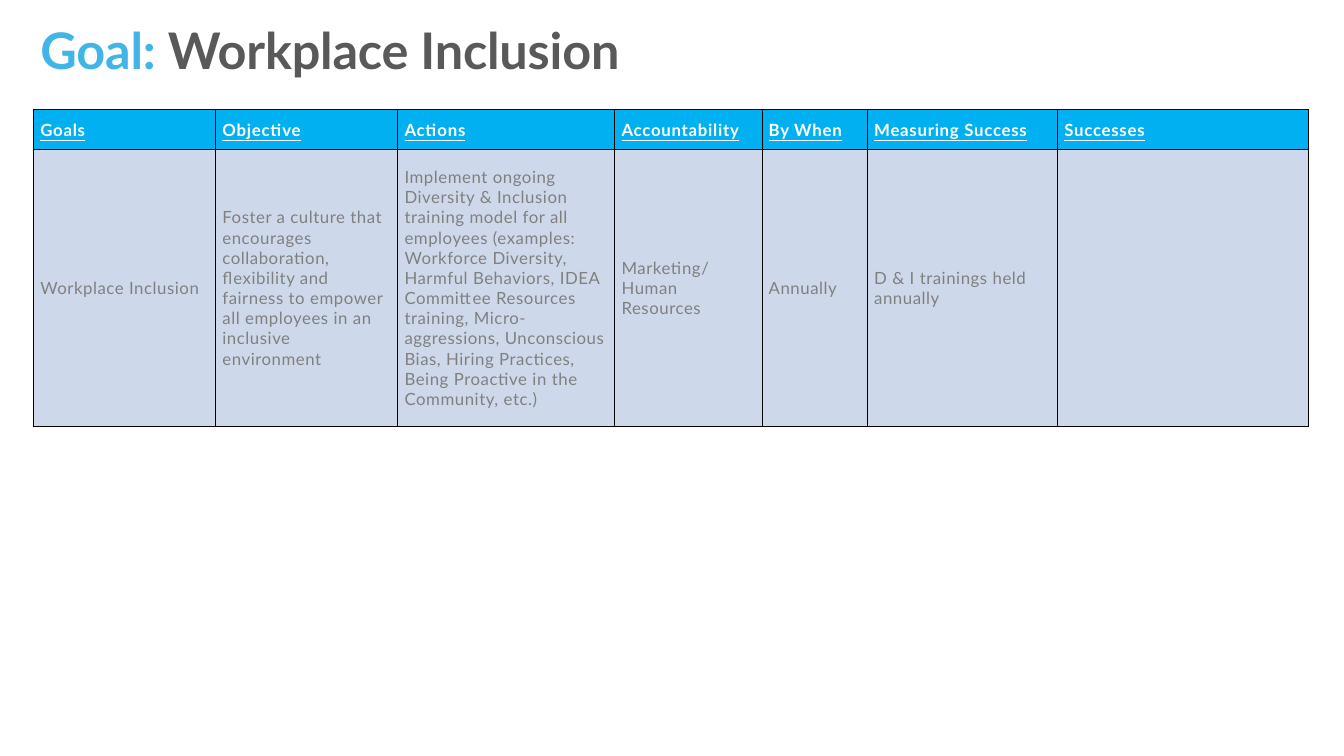
from lxml.etree import SubElement
from pptx import Presentation
from pptx.dml.color import RGBColor
from pptx.enum.text import MSO_ANCHOR as Anchor, MSO_AUTO_SIZE as AutoSize, PP_ALIGN as Align
from pptx.oxml.ns import qn
from pptx.util import Inches, Pt

COLORS = {
    "accent": "41B6E6", "title": "595959", "header": "00B0F0", "header_text": "FFFFFF",
    "body": "CDD9EA", "body_text": "808080", "border": "000000",
}
FONTS = {
    "title": {"name": "Lato", "size": Pt(54), "bold": True},
    "header": {"name": "Lato", "size": Pt(18), "bold": True, "underline": True},
    "body": {"name": "Lato", "size": Pt(18), "bold": False, "underline": False},
}
SPACING = {"title": -20, "header": 80, "body": 60}
TITLE_BOX = (0.6, 0.28, 16.89, 1.1)
TABLE_BOX = (0.5, 1.63, 18.97, 4.71)
ROW_HEIGHTS = [0.6, 4.11]
COLUMNS = [
    ("Goals", 2.71, "Workplace Inclusion"),
    ("Objective", 2.71, "Foster a culture that encourages collaboration, flexibility and "
     "fairness to empower all employees in an inclusive environment"),
    ("Actions", 3.23, "Implement ongoing Diversity & Inclusion training model for all employees "
     "(examples: Workforce Diversity, Harmful Behaviors, IDEA Committee Resources training, "
     "Micro-aggressions, Unconscious Bias, Hiring Practices, Being Proactive in the Community, "
     "etc.)"),
    ("Accountability", 2.19, "Marketing/\nHuman Resources"),
    ("By When", 1.57, "Annually"),
    ("Measuring Success", 2.83, "D & I trainings held annually"),
    ("Successes", 3.73, ""),
]


def rgb(name):
    """Return the named colour."""
    return RGBColor.from_string(COLORS[name])


def add_span(para, text, style, color):
    """Add a run of text in one of the font styles."""
    span = para.add_run()
    span.text = text
    for key, value in FONTS[style].items():
        setattr(span.font, key, value)
    span.font.color.rgb = rgb(color)
    span.font._element.set("spc", str(SPACING[style]))


def set_margins(target, margin):
    """Give a text frame or cell the same margin on every side."""
    for side in ("left", "top", "right", "bottom"):
        setattr(target, f"margin_{side}", Inches(margin))


def add_borders(cell):
    """Draw a thin line on all four sides of a cell."""
    properties = cell._tc.get_or_add_tcPr()
    for side in ("lnL", "lnR", "lnT", "lnB"):
        line = SubElement(properties, qn(f"a:{side}"), w=str(Pt(1)))
        fill = SubElement(line, qn("a:solidFill"))
        SubElement(fill, qn("a:srgbClr"), val=COLORS["border"])


def fill_cell(cell, text, style):
    """Format a table cell and write its paragraphs."""
    add_borders(cell)
    cell.fill.solid()
    cell.fill.fore_color.rgb = rgb(style)
    cell.vertical_anchor = Anchor.MIDDLE
    set_margins(cell, 0.1)
    frame = cell.text_frame
    for index, line in enumerate(text.splitlines()):
        para = frame.add_paragraph() if index else frame.paragraphs[0]
        para.line_spacing = Pt(21.6)
        add_span(para, line, style, f"{style}_text")


def place_title(page, box):
    """Move the title placeholder to the box and write the two-colour title."""
    title = page.shapes.title
    title.left, title.top, title.width, title.height = map(Inches, box)
    frame = title.text_frame
    frame.word_wrap = True
    frame.auto_size = AutoSize.SHAPE_TO_FIT_TEXT
    frame.vertical_anchor = Anchor.TOP
    set_margins(frame, 0)
    para = frame.paragraphs[0]
    para.alignment = Align.LEFT
    para.line_spacing = Pt(64.8)
    add_span(para, "Goal: ", "title", "accent")
    add_span(para, "Workplace Inclusion", "title", "title")


def place_goal_table(page, box):
    """Add the goal table in the box."""
    table = page.shapes.add_table(len(ROW_HEIGHTS), len(COLUMNS), *map(Inches, box)).table
    for row, height in zip(table.rows, ROW_HEIGHTS):
        row.height = Inches(height)
    for index, (heading, width, entry) in enumerate(COLUMNS):
        table.columns[index].width = Inches(width)
        fill_cell(table.cell(0, index), heading, "header")
        fill_cell(table.cell(1, index), entry, "body")


def main():
    """Build and save the deck."""
    deck = Presentation()
    deck.slide_width, deck.slide_height = Inches(20), Inches(11.25)
    page = deck.slides.add_slide(deck.slide_layouts[5])
    place_title(page, TITLE_BOX)
    place_goal_table(page, TABLE_BOX)
    deck.save("out.pptx")


if __name__ == "__main__":
    main()
